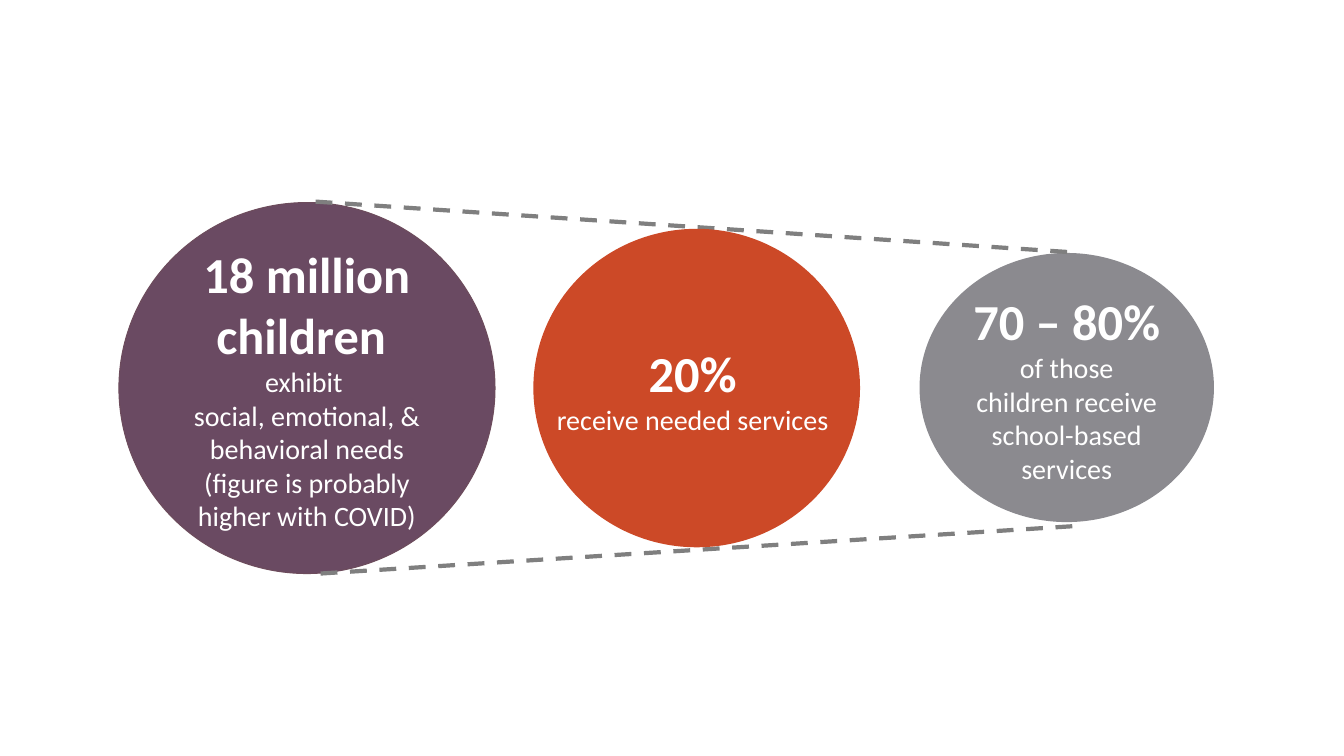
from dataclasses import dataclass

from lxml.etree import SubElement
from pptx import Presentation
from pptx.dml.color import RGBColor
from pptx.enum.dml import MSO_LINE
from pptx.enum.shapes import MSO_CONNECTOR, MSO_SHAPE
from pptx.enum.text import MSO_ANCHOR, MSO_AUTO_SIZE, PP_ALIGN
from pptx.oxml.ns import qn
from pptx.slide import Slide
from pptx.text.text import TextFrame
from pptx.util import Emu, Pt

EMU_PER_PX = 9144
WHITE = RGBColor(0xFF, 0xFF, 0xFF)
PLUM = RGBColor(0x6A, 0x4A, 0x62)
PLUM_EDGE = RGBColor(0x6D, 0x4C, 0x5C)
ORANGE = RGBColor(0xCC, 0x49, 0x27)
GRAY = RGBColor(0x8B, 0x8A, 0x8F)
DASH_GRAY = RGBColor(0x7F, 0x7F, 0x7F)

HEADLINE_FORMAT = {"name": "Calibri", "size": Pt(36), "bold": True}
DETAIL_FORMAT = {"name": "Calibri", "size": Pt(20), "bold": False}


@dataclass(frozen=True)
class Box:
    """A rectangle in px."""

    left: int
    top: int
    width: int
    height: int

    def to_emu(self) -> tuple[Emu, Emu, Emu, Emu]:
        """Return left, top, width and height as EMU."""
        return px(self.left), px(self.top), px(self.width), px(self.height)


@dataclass(frozen=True)
class Bubble:
    """A filled ellipse holding a headline and its details."""

    box: Box
    fill: RGBColor
    lines: tuple[str, ...] = ()
    edge: RGBColor | None = None


@dataclass(frozen=True)
class Tangent:
    """A dashed line from one point to another, in px."""

    start_x: int
    start_y: int
    end_x: int
    end_y: int


CHILDREN = Bubble(
    Box(118, 201, 373, 368),
    PLUM,
    (
        "18 million children ",
        "exhibit ",
        "social, emotional, & behavioral needs (figure is probably higher with COVID)",
    ),
    PLUM_EDGE,
)
SCHOOL_BASED = Bubble(
    Box(912, 251, 292, 267),
    GRAY,
    ("70 – 80%", "of those children receive school-based services"),
)
SERVED = Bubble(Box(529, 227, 324, 316), ORANGE)
SERVED_LABEL_BOX = Box(530, 334, 314, 104)
SERVED_LINES = ("20%", "receive needed services")
TANGENTS = (Tangent(313, 200, 1059, 250), Tangent(318, 569, 1065, 522))


def px(length: int) -> Emu:
    """Convert px to EMU."""
    return Emu(length * EMU_PER_PX)


def write_lines(text_frame: TextFrame, lines: tuple[str, ...]) -> None:
    """Write a bold headline followed by plain detail paragraphs."""
    text_frame.word_wrap = True
    text_frame.vertical_anchor = MSO_ANCHOR.MIDDLE
    for index, line in enumerate(lines):
        paragraph = text_frame.add_paragraph() if index else text_frame.paragraphs[0]
        paragraph.alignment = PP_ALIGN.CENTER
        run = paragraph.add_run()
        run.text = line
        font_format = DETAIL_FORMAT if index else HEADLINE_FORMAT
        for name, value in font_format.items():
            setattr(run.font, name, value)
        run.font.color.rgb = WHITE


def draw_bubble(slide: Slide, bubble: Bubble) -> None:
    """Draw an ellipse with its text."""
    shape = slide.shapes.add_shape(MSO_SHAPE.OVAL, *bubble.box.to_emu())
    shape.shadow.inherit = False
    shape.fill.solid()
    shape.fill.fore_color.rgb = bubble.fill
    if bubble.edge is None:
        shape.line.fill.background()
    else:
        shape.line.color.rgb = bubble.edge
        shape.line.width = Pt(0.75)
    write_lines(shape.text_frame, bubble.lines)


def draw_tangent(slide: Slide, tangent: Tangent) -> None:
    """Draw a dashed line without a shadow."""
    connector = slide.shapes.add_connector(
        MSO_CONNECTOR.STRAIGHT,
        px(tangent.start_x),
        px(tangent.start_y),
        px(tangent.end_x),
        px(tangent.end_y),
    )
    connector.line.color.rgb = DASH_GRAY
    connector.line.width = Pt(3)
    connector.line.dash_style = MSO_LINE.DASH
    SubElement(connector._element.spPr, qn("a:effectLst"))


def draw_label(slide: Slide, box: Box, lines: tuple[str, ...]) -> None:
    """Draw a text box that grows with its text."""
    label = slide.shapes.add_textbox(*box.to_emu())
    write_lines(label.text_frame, lines)
    label.text_frame.auto_size = MSO_AUTO_SIZE.SHAPE_TO_FIT_TEXT


def main() -> None:
    """Build and save the slide."""
    presentation = Presentation()
    presentation.slide_width = px(1333)
    presentation.slide_height = px(750)
    slide = presentation.slides.add_slide(presentation.slide_layouts[6])
    for bubble in (CHILDREN, SCHOOL_BASED):
        draw_bubble(slide, bubble)
    for tangent in TANGENTS:
        draw_tangent(slide, tangent)
    draw_bubble(slide, SERVED)
    draw_label(slide, SERVED_LABEL_BOX, SERVED_LINES)
    presentation.save("out.pptx")


if __name__ == "__main__":
    main()
